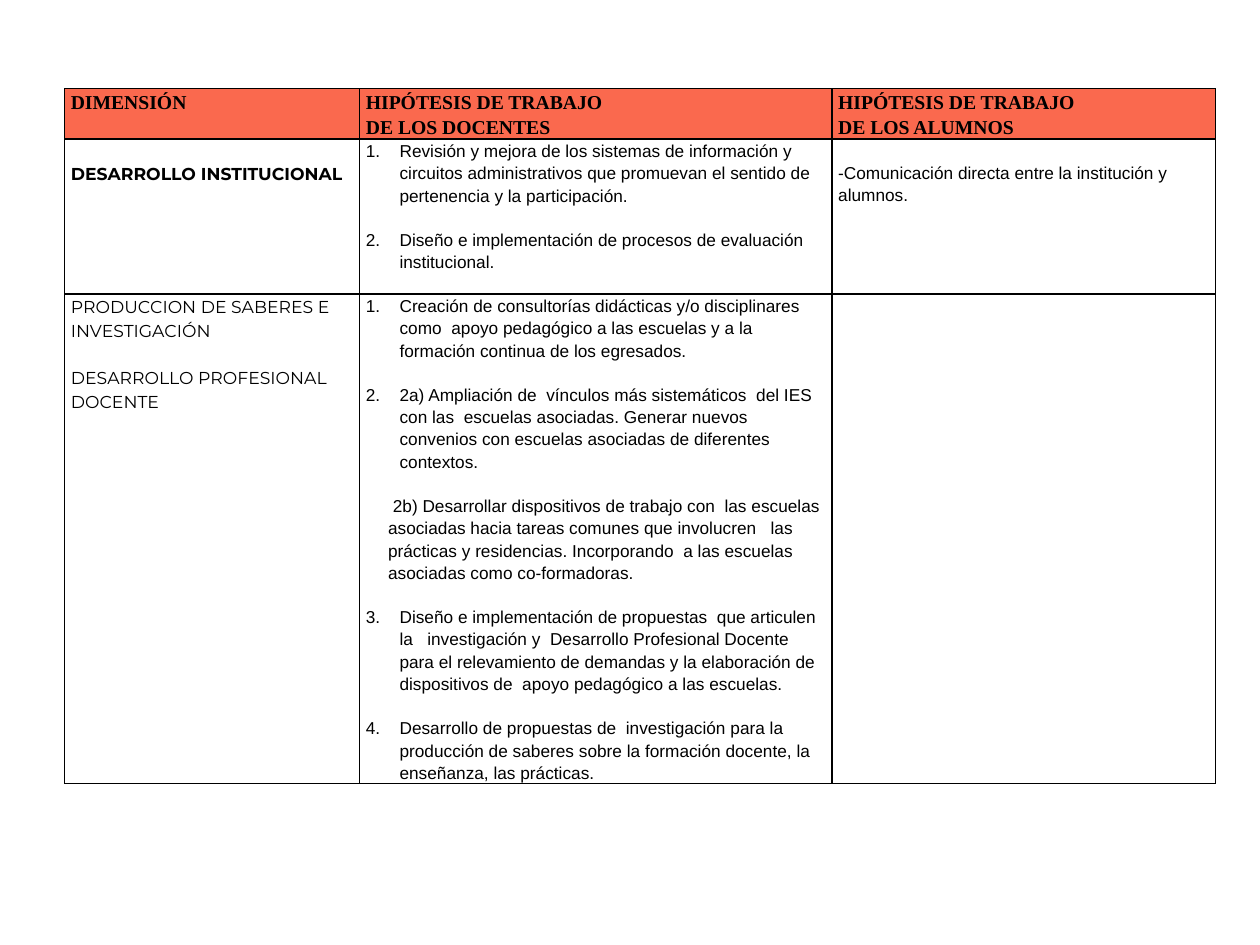
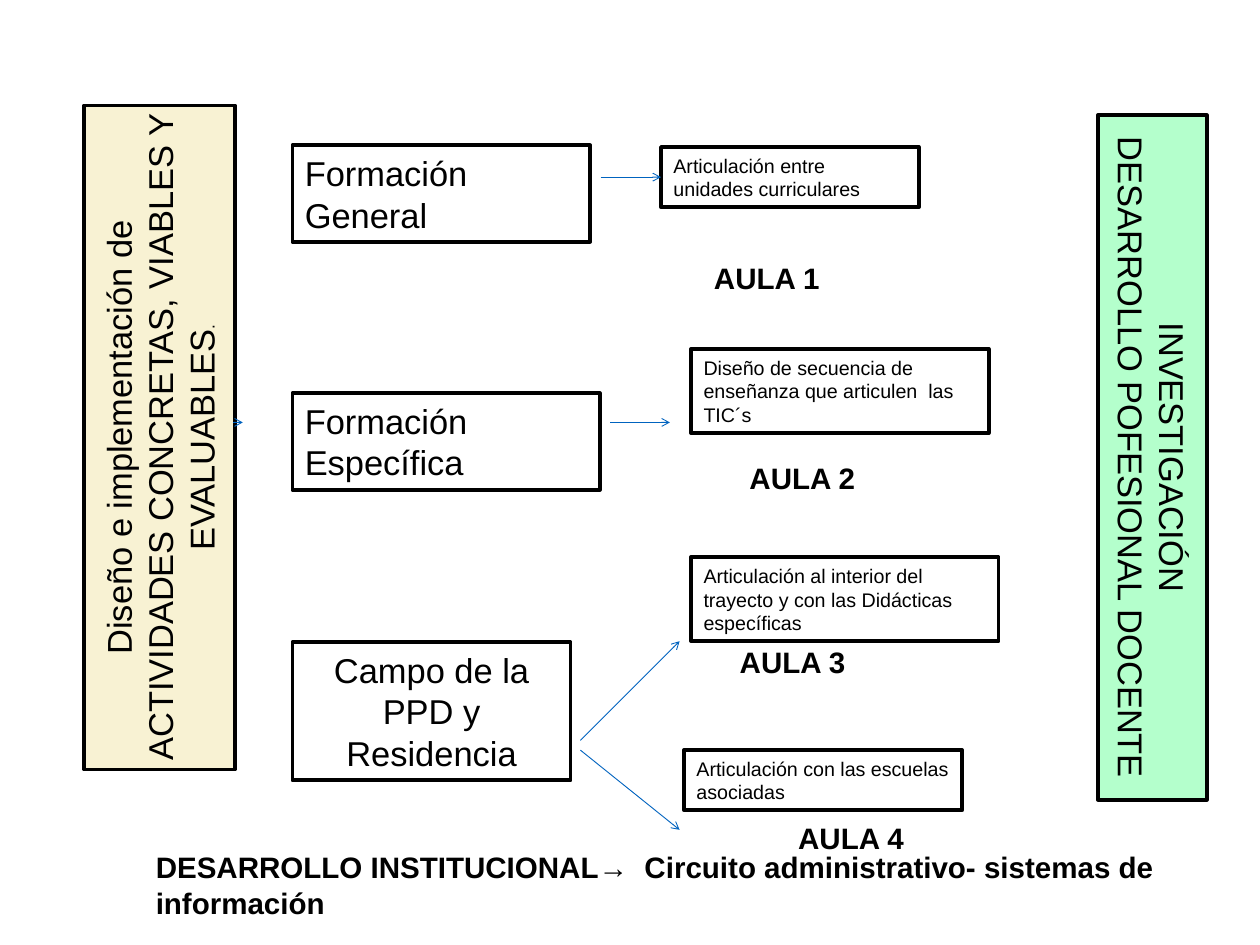
from lxml.etree import SubElement
from pptx import Presentation
from pptx.dml.color import RGBColor
from pptx.enum.shapes import MSO_CONNECTOR, MSO_SHAPE
from pptx.enum.text import MSO_ANCHOR, PP_ALIGN
from pptx.oxml.ns import qn
from pptx.util import Inches, Pt

# Shared look
COLORS = {"ink": "000000", "header": "FA694E", "cream": "F8F2D3",
          "mint": "B4FFCC", "arrow": "0063BF"}
SLIDE_W, SLIDE_H = 14.22, 10.67
FORMATS = {
    "header": {"name": "Times New Roman", "size": Pt(16), "bold": True},
    "active": {"name": "Montserrat", "size": Pt(14), "bold": True},
    "dimension": {"name": "Montserrat", "size": Pt(14), "bold": False},
    "body": {"name": "Arial", "size": Pt(14), "bold": False},
    "field": {"name": "Arial", "size": Pt(28), "bold": False},
    "task": {"name": "Arial", "size": Pt(16), "bold": False},
    "label": {"name": "Arial", "size": Pt(24), "bold": True},
}

# Table: each cell is (format, lines); a line is a text or (text, number)
COLUMNS = [3.33, 5.33, 4.33]
ROWS = [0.57, 1.75, 5.53]
LINE_SPACING, ITEM_GAP, HANGING, INDENT = 1.15, 18, 0.38, 0.25
HYPOTHESES = [
    [("header", ["DIMENSIÓN"]),
     ("header", ["HIPÓTESIS DE TRABAJO", "DE LOS DOCENTES"]),
     ("header", ["HIPÓTESIS DE TRABAJO", "DE LOS ALUMNOS"])],
    [("active", ["DESARROLLO INSTITUCIONAL"]),
     ("body", [
         ("Revisión y mejora de los sistemas de información y circuitos administrativos "
          "que promuevan el sentido de pertenencia y la participación.", 1),
         ("Diseño e implementación de procesos de evaluación institucional.", 2)]),
     ("body", ["-Comunicación directa entre la institución y alumnos."])],
    [("dimension", ["PRODUCCION DE SABERES E INVESTIGACIÓN",
                    "DESARROLLO PROFESIONAL DOCENTE"]),
     ("body", [
         ("Creación de consultorías didácticas y/o disciplinares como  apoyo pedagógico "
          "a las escuelas y a la formación continua de los egresados.", 1),
         ("2a) Ampliación de  vínculos más sistemáticos  del IES con las  escuelas "
          "asociadas. Generar nuevos convenios con escuelas asociadas de diferentes "
          "contextos.", 2),
         (" 2b) Desarrollar dispositivos de trabajo con  las escuelas asociadas hacia "
          "tareas comunes que involucren   las prácticas y residencias. Incorporando  a "
          "las escuelas asociadas como co-formadoras.", None),
         ("Diseño e implementación de propuestas  que articulen la   investigación y  "
          "Desarrollo Profesional Docente para el relevamiento de demandas y la "
          "elaboración de dispositivos de  apoyo pedagógico a las escuelas.", 3),
         ("Desarrollo de propuestas de  investigación para la producción de saberes "
          "sobre la formación docente, la enseñanza, las prácticas.", 4)]),
     ("body", [])],
]
LOWERED = {(1, 0), (1, 2)}  # cells whose text starts one line down

# Diagram: (left, top, width, height), lines, then looks
FIELD_X = 3.3
PILLARS = [
    ((0.95, 1.19, 1.7, 7.5), "cream", "vert270",
     ["Diseño e implementación de", "ACTIVIDADES CONCRETAS, VIABLES Y EVALUABLES"], "."),
    ((12.39, 1.3, 1.23, 7.73), "mint", "vert",
     ["INVESTIGACIÓN", "DESARROLLO POFESIONAL DOCENTE"], ""),
]
FIELDS = [
    ((FIELD_X, 1.64, 3.36, 1.09), "Formación General", PP_ALIGN.LEFT),
    ((FIELD_X, 4.44, 3.47, 1.09), "Formación Específica", PP_ALIGN.LEFT),
    ((FIELD_X, 7.25, 3.14, 1.56), "Campo de la PPD y Residencia", PP_ALIGN.CENTER),
]
TASKS = [
    ((7.46, 1.66, 2.91, 0.68), "Articulación entre unidades curriculares"),
    ((7.8, 3.94, 3.36, 0.95), "Diseño de secuencia de enseñanza que articulen  las TIC´s"),
    ((7.8, 6.29, 3.47, 0.95),
     "Articulación al interior del  trayecto y con las Didácticas específicas"),
    ((7.72, 8.47, 3.14, 0.68), "Articulación con las escuelas asociadas"),
]
CLASSROOMS = [(7.96, 2.89), (8.36, 5.15), (8.25, 7.22), (8.91, 9.21)]
CLASSROOM_SIZE = (2.23, 0.5)
FOOTER = ((1.66, 9.54, 12.06, 0.91),
          "DESARROLLO INSTITUCIONAL→  Circuito administrativo- sistemas de información")
# (from x, from y, to x, to y), index of the task joined
ARROWS = [
    ((2.63, 4.77, 2.74, 4.77), None),
    ((6.78, 2, 7.46, 2), 0),
    ((6.89, 4.77, 7.56, 4.77), None),
    ((6.55, 8.36, 7.67, 7.24), None),
    ((6.55, 8.47, 7.67, 9.37), None),
]


def rgb(color):
    return RGBColor.from_string(COLORS[color])


def inches(lengths):
    return [Inches(length) for length in lengths]


def add_run(paragraph, text, style, **changes):
    run = paragraph.add_run()
    run.text = text
    for attribute, value in {**FORMATS[style], **changes}.items():
        setattr(run.font, attribute, value)
    run.font.color.rgb = rgb("ink")


def paragraphs(frame, count):
    """Yield the frame's first paragraph, then new ones."""
    for index in range(count):
        yield frame.paragraphs[0] if index == 0 else frame.add_paragraph()


def set_margins(frame, across, down):
    margins = {"margin_left": across, "margin_right": across,
               "margin_top": down, "margin_bottom": down}
    for attribute, value in margins.items():
        setattr(frame, attribute, Inches(value))


def draw_borders(cell):
    properties = cell._tc.get_or_add_tcPr()
    for side in ("lnL", "lnR", "lnT", "lnB"):
        border = SubElement(properties, qn(f"a:{side}"), w=str(Pt(1)))
        fill = SubElement(border, qn("a:solidFill"))
        SubElement(fill, qn("a:srgbClr"), val=COLORS["ink"])


def number_item(paragraph, number):
    properties = paragraph._p.get_or_add_pPr()
    properties.set("marL", str(Inches(HANGING if number else INDENT)))
    properties.set("indent", str(Inches(-HANGING if number else 0)))
    if number:
        SubElement(properties, qn("a:buFont"), typeface="Arial")
        SubElement(properties, qn("a:buAutoNum"), type="arabicPeriod", startAt=str(number))


def fill_cell(cell, style, lines, lowered):
    set_margins(cell, 0.07, 0)
    if lowered:
        cell.margin_top = Inches(0.25)
    draw_borders(cell)
    if style == "header":
        cell.fill.solid()
        cell.fill.fore_color.rgb = rgb("header")
    else:
        cell.fill.background()
    for index, (line, paragraph) in enumerate(
            zip(lines, paragraphs(cell.text_frame, len(lines)))):
        paragraph.line_spacing = LINE_SPACING
        if index and style != "header":
            paragraph.space_before = Pt(ITEM_GAP)
        if isinstance(line, tuple):
            line, number = line
            number_item(paragraph, number)
        add_run(paragraph, line, style)


def add_box(slide, place, lines, style, align=PP_ALIGN.LEFT, fill=None, turn=None):
    box = slide.shapes.add_shape(MSO_SHAPE.RECTANGLE, *inches(place))
    box.shadow.inherit = False
    if fill:
        box.fill.solid()
        box.fill.fore_color.rgb = rgb(fill)
    else:
        box.fill.background()
    box.line.color.rgb = rgb("ink")
    box.line.width = Pt(3)
    frame = box.text_frame
    frame.word_wrap = True
    frame.vertical_anchor = MSO_ANCHOR.MIDDLE
    set_margins(frame, 0.14, 0.07)
    if turn:
        frame._txBody.bodyPr.set("vert", turn)
    for line, paragraph in zip(lines, paragraphs(frame, len(lines))):
        paragraph.alignment = align
        add_run(paragraph, line, style)
    return box


def add_label(slide, place, text):
    label = slide.shapes.add_textbox(*inches(place))
    label.text_frame.word_wrap = True
    add_run(label.text_frame.paragraphs[0], text, "label")


def add_arrow(slide, ends, task):
    arrow = slide.shapes.add_connector(MSO_CONNECTOR.STRAIGHT, *inches(ends))
    arrow.line.color.rgb = rgb("arrow")
    arrow.line.width = Pt(0.75)
    SubElement(arrow.line._get_or_add_ln(), qn("a:tailEnd"), type="arrow")
    SubElement(arrow._element.spPr, qn("a:effectLst"))
    if task is not None:
        arrow.end_connect(task, 1)


def build_hypotheses(slide):
    table = slide.shapes.add_table(
        len(ROWS), len(COLUMNS), *inches((0.73, 1, sum(COLUMNS), sum(ROWS)))).table
    table.first_row = table.horz_banding = False
    for column, width in zip(table.columns, COLUMNS):
        column.width = Inches(width)
    for r, (height, row) in enumerate(zip(ROWS, HYPOTHESES)):
        table.rows[r].height = Inches(height)
        for c, (style, lines) in enumerate(row):
            fill_cell(table.cell(r, c), style, lines, (r, c) in LOWERED)


def build_diagram(slide):
    # Vertical pillars
    for place, fill, turn, lines, ending in PILLARS:
        pillar = add_box(slide, place, lines, "field", PP_ALIGN.CENTER, fill, turn)
        if ending:
            add_run(pillar.text_frame.paragraphs[-1], ending, "field", size=Pt(14))
    # Training fields, tasks and the arrows between them
    for place, text, align in FIELDS:
        add_box(slide, place, [text], "field", align)
    tasks = [add_box(slide, place, [text], "task") for place, text in TASKS]
    for ends, joined in ARROWS:
        add_arrow(slide, ends, None if joined is None else tasks[joined])
    # Classroom labels and closing line
    for number, corner in enumerate(CLASSROOMS, 1):
        add_label(slide, corner + CLASSROOM_SIZE, f"AULA {number}")
    add_label(slide, *FOOTER)


def main():
    deck = Presentation()
    deck.slide_width, deck.slide_height = inches((SLIDE_W, SLIDE_H))
    for build in (build_hypotheses, build_diagram):
        build(deck.slides.add_slide(deck.slide_layouts[6]))
    deck.save("out.pptx")


if __name__ == "__main__":
    main()
